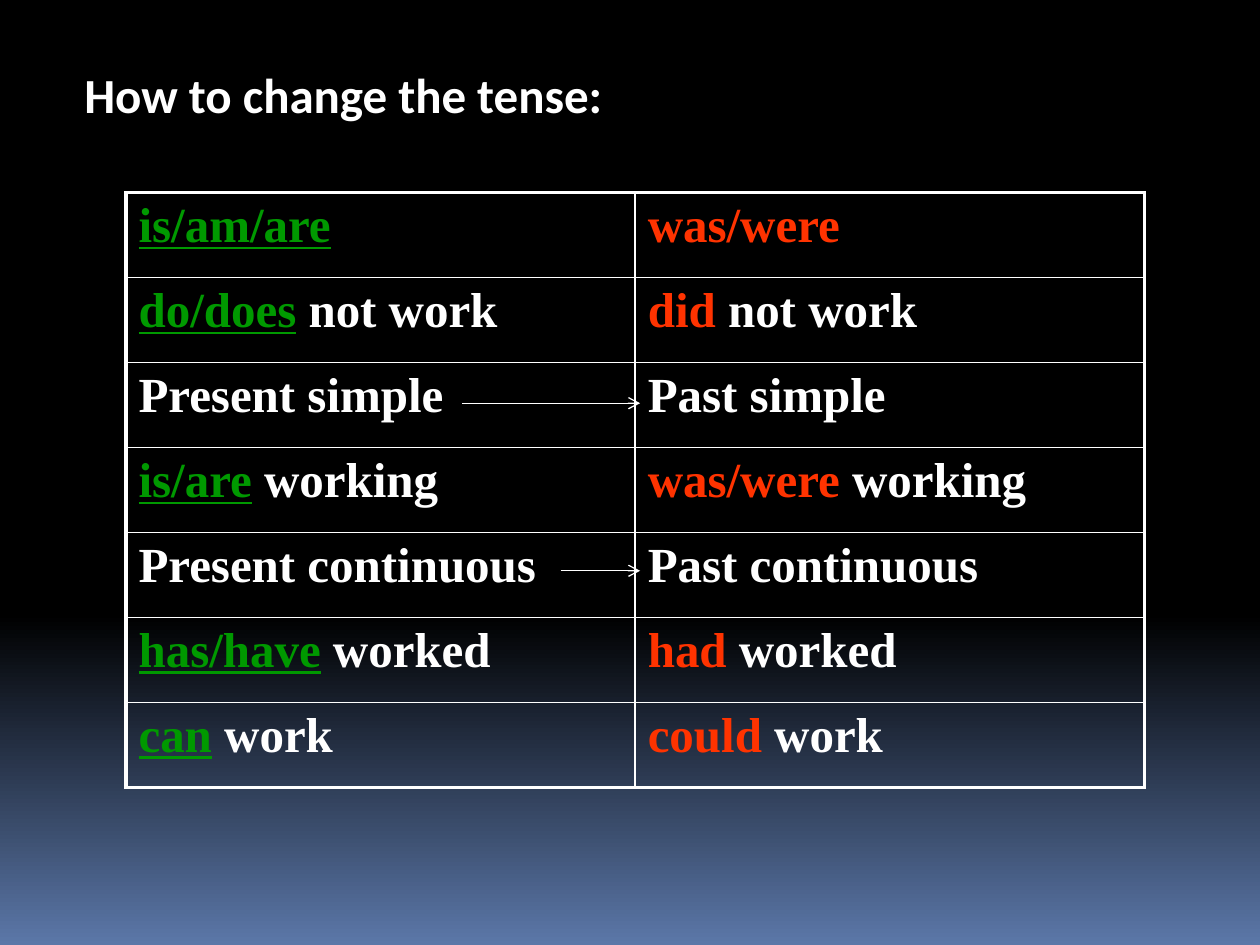
"""Build the slide on how to change the tense."""
import copy

import pptx
import pptx.dml.color
import pptx.enum.shapes
import pptx.enum.text
import pptx.util
from lxml import etree
from pptx.oxml.ns import qn

Pt = pptx.util.Pt

BLACK, WHITE, BLUE = "000000", "FFFFFF", "5B77A8"
GREEN, RED = "009900", "FF3300"
BODY_FONT = "Times New Roman"
TEXT_SIZE = 28

TABLE_LEFT, TABLE_TOP = 72, 110.16
COLUMN_WIDTH, ROW_HEIGHT = 291, 48.55
OUTER_BORDER, INNER_BORDER = 2.25, 1

# Each cell is a pair: the verb that changes, and the rest of the text.
TENSES = [
    (("is/am/are", ""), ("was/were", "")),
    (("do/does", " not work"), ("did", " not work")),
    (("", "Present simple"), ("", "Past simple")),
    (("is/are", " working"), ("was/were", " working")),
    (("", "Present continuous"), ("", "Past continuous")),
    (("has/have", " worked"), ("had", " worked")),
    (("can", " work"), ("could", " work")),
]

ARROW_END = 365.76
ARROW_STARTS = [(264.24, 230.4), (320.4, 326.16)]


def rgb(value):
    """Turn a hex string into a colour."""
    return pptx.dml.color.RGBColor.from_string(value)


def paint_background(slide):
    """Fill the slide with black that fades to blue at the bottom."""
    fill = slide.background.fill
    fill.gradient()
    fill.gradient_angle = 270
    fade_start, fade_end = fill.gradient_stops
    fade_start.color.rgb, fade_start.position = rgb(BLACK), 0.65
    fade_end.color.rgb, fade_end.position = rgb(BLUE), 1
    stops = slide.element.find(".//" + qn("a:gsLst"))
    top = copy.deepcopy(stops[0])
    top.set("pos", "0")
    stops.insert(0, top)


def set_font(paragraph, name):
    """Give a paragraph the bold slide font."""
    font = paragraph.font
    font.name, font.size, font.bold = name, Pt(TEXT_SIZE), True


def add_heading(slide, text):
    """Place and format the title."""
    title = slide.shapes.title
    title.left, title.top = Pt(41), Pt(33)
    title.width, title.height = Pt(643), Pt(41)
    frame = title.text_frame
    frame.text = text
    frame.word_wrap = True
    frame.vertical_anchor = pptx.enum.text.MSO_ANCHOR.TOP
    heading = frame.paragraphs[0]
    heading.alignment = pptx.enum.text.PP_ALIGN.LEFT
    set_font(heading, "Calibri")
    heading.font.color.rgb = rgb(WHITE)


def add_border(cell, side, width):
    """Draw one white border of a cell."""
    properties = cell._tc.get_or_add_tcPr()
    border = etree.SubElement(properties, qn(f"a:ln{side}"), w=str(Pt(width)))
    fill = etree.SubElement(border, qn("a:solidFill"))
    etree.SubElement(fill, qn("a:srgbClr"), val=WHITE)


def fill_cell(cell, verb, rest, verb_color, underlined):
    """Write the coloured verb and the white rest into a cell."""
    paragraph = cell.text_frame.paragraphs[0]
    set_font(paragraph, BODY_FONT)
    spacing = etree.Element(qn("a:spcBef"))
    etree.SubElement(spacing, qn("a:spcPct"), val="20000")
    paragraph._p.get_or_add_pPr().insert(0, spacing)
    for text, color, underline in ((verb, verb_color, underlined),
                                   (rest, WHITE, False)):
        if text:
            run = paragraph.add_run()
            run.text = text
            run.font.color.rgb = rgb(color)
            run.font.underline = underline


def add_tense_table(slide):
    """Add the table of present and past forms."""
    last_row, last_column = len(TENSES) - 1, 1
    table = slide.shapes.add_table(
        len(TENSES), 2, Pt(TABLE_LEFT), Pt(TABLE_TOP),
        Pt(2 * COLUMN_WIDTH), Pt(len(TENSES) * ROW_HEIGHT)).table
    table.first_row = table.horz_banding = False
    for row, forms in enumerate(TENSES):
        table.rows[row].height = Pt(ROW_HEIGHT)
        for column, (verb, rest) in enumerate(forms):
            cell = table.cell(row, column)
            present = column == 0
            fill_cell(cell, verb, rest, GREEN if present else RED, present)
            outer_sides = {"L": present, "R": column == last_column,
                           "T": row == 0, "B": row == last_row}
            for side, outer in outer_sides.items():
                add_border(cell, side, OUTER_BORDER if outer else INNER_BORDER)
            cell.fill.background()


def add_arrow(slide, start, y):
    """Draw an arrow from a present tense to its past tense."""
    arrow = slide.shapes.add_connector(
        pptx.enum.shapes.MSO_CONNECTOR.STRAIGHT,
        Pt(start), Pt(y), Pt(ARROW_END), Pt(y))
    arrow.line.color.rgb = rgb(WHITE)
    arrow.line.width = Pt(0.75)
    properties = arrow.element.spPr
    etree.SubElement(properties.find(qn("a:ln")), qn("a:tailEnd"), type="arrow")
    etree.SubElement(properties, qn("a:effectLst"))


def main():
    """Build and save the presentation."""
    presentation = pptx.Presentation()
    presentation.slide_width, presentation.slide_height = Pt(720), Pt(540)
    slide = presentation.slides.add_slide(presentation.slide_layouts[5])
    paint_background(slide)
    add_heading(slide, "How to change the tense:")
    add_tense_table(slide)
    for start, y in ARROW_STARTS:
        add_arrow(slide, start, y)
    presentation.save("out.pptx")


if __name__ == "__main__":
    main()
